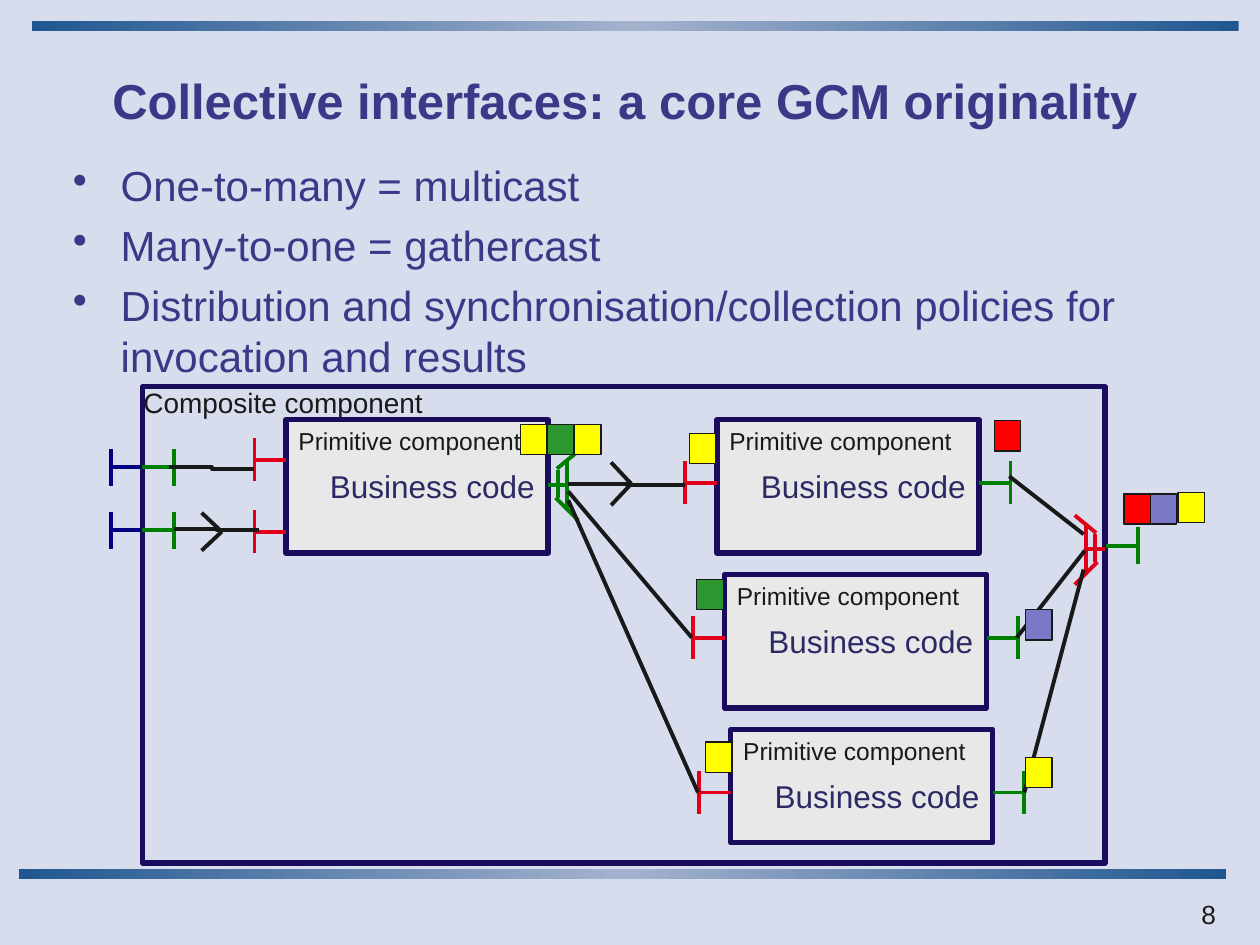
from dataclasses import dataclass

from lxml import etree
from pptx import Presentation
from pptx.dml.color import RGBColor
from pptx.enum.shapes import MSO_CONNECTOR, MSO_SHAPE
from pptx.enum.text import MSO_ANCHOR, MSO_AUTO_SIZE, PP_ALIGN
from pptx.oxml.ns import qn
from pptx.util import Inches, Pt

RECTANGLE = MSO_SHAPE.RECTANGLE
STRAIGHT, ELBOW = MSO_CONNECTOR.STRAIGHT, MSO_CONNECTOR.ELBOW
LEFT, CENTER, RIGHT = PP_ALIGN.LEFT, PP_ALIGN.CENTER, PP_ALIGN.RIGHT
TOP, MIDDLE = MSO_ANCHOR.TOP, MSO_ANCHOR.MIDDLE
NO_AUTOFIT = MSO_AUTO_SIZE.NONE

COLORS = {
    "background": "D8DDED", "heading": "3B3887", "code": "2C2A65",
    "ink": "191919", "frame": "1A0C5D", "panel": "E8E8E8",
    "server": "E1001A", "client": "008000", "external": "000080",
    "band_end": "205790", "band_middle": "A4B2CE",
    "yellow": "FFFF00", "green": "2C972E", "red": "FF0000", "violet": "7B78C7",
}
TOKEN_WIDTH, TOKEN_HEIGHT = 0.21, 0.24
PRIMITIVE_WIDTH = 2.08
STEM = 0.25


@dataclass
class Primitive:
    left: float
    top: float
    height: float
    servers: tuple[float, ...]
    clients: tuple[float, ...] = ()


@dataclass
class Port:
    """A T-shaped interface; direction is 1 to the right and -1 to the left."""
    edge: float
    y: float
    direction: int
    color: str
    half_bar: float = 0.145


@dataclass
class Link:
    start: tuple[float, float]
    end: tuple[float, float]
    kind: MSO_CONNECTOR = STRAIGHT


@dataclass
class Token:
    left: float
    top: float
    color: str


PRIMITIVES = [
    Primitive(2.27, 3.33, 1.06, servers=(3.65, 4.22)),
    Primitive(5.69, 3.33, 1.06, servers=(3.83,), clients=(3.83,)),
    Primitive(5.75, 4.56, 1.06, servers=(5.06,), clients=(5.06,)),
    Primitive(5.8, 5.79, 0.9, servers=(6.29,), clients=(6.29,)),
]
COMPOSITE_PORTS = [Port(8.78, 4.33, 1, "client")] + [
    Port(1.13, y, direction, color)
    for y in (3.71, 4.21)
    for direction, color in ((-1, "external"), (1, "client"))
]
LINKS = [
    Link((1.34, 3.71), (2.02, 3.72), ELBOW),
    Link((1.38, 4.2), (2.06, 4.21), ELBOW),
    Link((4.51, 3.84), (5.44, 3.85), ELBOW),
    Link((4.51, 3.9), (5.49, 5.06)),
    Link((4.51, 3.97), (5.54, 6.29)),
    Link((8.01, 3.78), (8.6, 4.24)),
    Link((8.07, 5.06), (8.61, 4.37)),
    Link((8.13, 6.29), (8.6, 4.52)),
]
TOKENS = [
    Token(4.13, 3.37, "yellow"), Token(4.34, 3.37, "green"), Token(4.56, 3.37, "yellow"),
    Token(5.47, 3.44, "yellow"), Token(5.53, 4.6, "green"), Token(5.6, 5.89, "yellow"),
    Token(7.89, 3.34, "red"), Token(8.14, 4.84, "violet"), Token(8.14, 6.01, "yellow"),
    Token(8.92, 3.92, "red"), Token(9.13, 3.92, "violet"), Token(9.35, 3.91, "yellow"),
]
BULLETS = [
    "One-to-many = multicast",
    "Many-to-one = gathercast",
    "Distribution and synchronisation/collection policies for invocation and results",
]


def rgb(name: str) -> RGBColor:
    return RGBColor.from_string(COLORS[name])


def place(shape, left: float, top: float, width: float, height: float) -> None:
    shape.left, shape.top = Inches(left), Inches(top)
    shape.width, shape.height = Inches(width), Inches(height)


def write(box, *lines: str, size: float, color: str, bold=False, align=LEFT,
          anchor=TOP, wrap=True, bullet=False) -> None:
    frame = box.text_frame
    frame.auto_size, frame.word_wrap, frame.vertical_anchor = NO_AUTOFIT, wrap, anchor
    for index, line in enumerate(lines):
        para = frame.add_paragraph() if index else frame.paragraphs[0]
        para.alignment = align
        span = para.add_run()
        span.text = line
        span.font.name, span.font.size, span.font.bold = "Arial", Pt(size), bold
        span.font.color.rgb = rgb(color)
        if bullet:
            para.space_before = Pt(5.5)
            properties = para._p.get_or_add_pPr()
            properties.set("marL", str(Inches(0.38)))
            properties.set("indent", str(Inches(-0.38)))
            etree.SubElement(properties, qn("a:buChar"), char="•")


def add_text(page, left: float, top: float, width: float, height: float,
             *lines: str, **style) -> None:
    box = page.shapes.add_textbox(Inches(left), Inches(top), Inches(width), Inches(height))
    write(box, *lines, **style)


def add_box(page, left: float, top: float, width: float, height: float,
            fill: str | None, line: str | None, weight: float = 0.75):
    box = page.shapes.add_shape(RECTANGLE, 0, 0, 0, 0)
    place(box, left, top, width, height)
    box.shadow.inherit = False
    if fill:
        box.fill.solid()
        box.fill.fore_color.rgb = rgb(fill)
    else:
        box.fill.background()
    if line:
        box.line.color.rgb, box.line.width = rgb(line), Pt(weight)
    else:
        box.line.fill.background()
    return box


def add_band(page, left: float, top: float) -> None:
    band = add_box(page, left, top, 9.58, 0.08, None, None)
    band.fill.gradient()
    band.fill.gradient_angle = 0
    stops = band._element.spPr.find(".//" + qn("a:gsLst"))
    for stop in list(stops):
        stops.remove(stop)
    for position, color in ((0, "band_end"), (50000, "band_middle"), (100000, "band_end")):
        stop = etree.SubElement(stops, qn("a:gs"), pos=str(position))
        etree.SubElement(stop, qn("a:srgbClr"), val=COLORS[color])


def add_line(page, start: tuple[float, float], end: tuple[float, float],
             color: str = "ink", kind=STRAIGHT) -> None:
    line = page.shapes.add_connector(kind, *(Inches(value) for value in (*start, *end)))
    line.line.color.rgb, line.line.width = rgb(color), Pt(2.25)
    etree.SubElement(line._element.spPr, qn("a:effectLst"))


def add_port(page, port: Port) -> None:
    tip = port.edge + port.direction * STEM
    add_line(page, (port.edge, port.y), (tip, port.y), port.color)
    add_line(page, (tip, port.y - port.half_bar), (tip, port.y + port.half_bar), port.color)


def add_collective_port(page, edge: float, y: float, direction: int, color: str) -> None:
    """Draw a multicast or gathercast interface: stem, two bars and two wings."""
    strokes = [
        ((0, 0), (0.15, 0)),
        ((0.15, -0.19), (0.15, 0.19)),
        ((0.08, -0.12), (0.08, 0.1)),
        ((0.07, -0.13), (0.24, -0.27)),
        ((0.06, 0.1), (0.24, 0.28)),
    ]
    for stroke in strokes:
        start, end = [(edge + direction * dx, y + dy) for dx, dy in stroke]
        add_line(page, start, end, color)


def add_open_arrowhead(page, tip_x: float, tip_y: float, half_height: float) -> None:
    for dy in (-half_height, half_height):
        add_line(page, (tip_x - 0.16, tip_y + dy), (tip_x, tip_y))


def add_primitive(page, part: Primitive) -> None:
    add_box(page, part.left, part.top, PRIMITIVE_WIDTH, part.height, "panel", "frame", 3)
    add_text(page, part.left + 0.25, part.top + 0.33, 1.84, 0.4, "Business code",
             size=18, color="code", wrap=False)
    add_text(page, part.left, part.top, 1.98, 0.34, "Primitive component",
             size=14, color="ink", wrap=False)
    for y in part.servers:
        add_port(page, Port(part.left, y, -1, "server", 0.17))
    for y in part.clients:
        add_port(page, Port(part.left + PRIMITIVE_WIDTH, y, 1, "client", 0.17))


def main() -> None:
    deck = Presentation()
    deck.slide_width, deck.slide_height = Inches(10), Inches(7.5)
    page = deck.slides.add_slide(deck.slide_layouts[5])
    page.background.fill.solid()
    page.background.fill.fore_color.rgb = rgb("background")

    add_band(page, 0.25, 0.17)
    add_band(page, 0.15, 6.9)
    title = page.shapes.title
    place(title, 0.44, 0.33, 9.04, 0.92)
    write(title, "Collective interfaces: a core GCM originality", size=28,
          color="heading", bold=True, align=CENTER, anchor=MIDDLE)
    add_text(page, 0.48, 1.22, 9.02, 5, *BULLETS, size=24, color="heading", bullet=True)
    add_text(page, 7.92, 7.08, 1.83, 0.25, "8", size=15, color="ink", align=RIGHT)

    add_box(page, 1.13, 3.07, 7.64, 3.78, None, "frame", 3)
    add_text(page, 1.04, 3.01, 2.45, 0.32, "Composite component",
             size=16, color="ink", wrap=False)
    for part in PRIMITIVES:
        add_primitive(page, part)
    for port in COMPOSITE_PORTS:
        add_port(page, port)
    add_collective_port(page, 4.35, 3.85, 1, "client")
    add_collective_port(page, 8.77, 4.36, -1, "server")
    for link in LINKS:
        add_line(page, link.start, link.end, kind=link.kind)
    add_open_arrowhead(page, 1.76, 4.22, 0.15)
    add_open_arrowhead(page, 5.01, 3.84, 0.17)
    for token in TOKENS:
        add_box(page, token.left, token.top, TOKEN_WIDTH, TOKEN_HEIGHT, token.color, "ink")

    deck.save("out.pptx")


if __name__ == "__main__":
    main()
